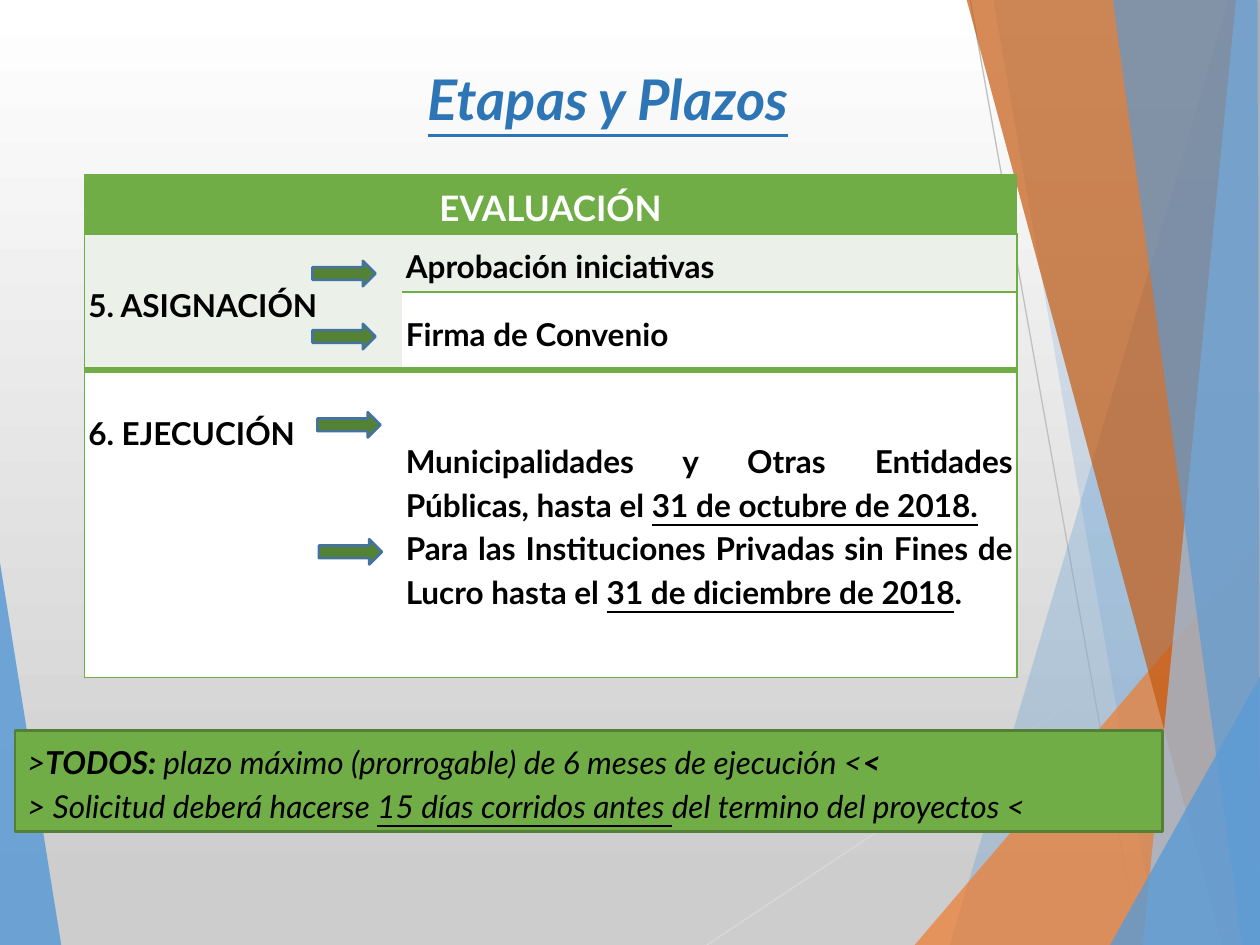
from lxml.etree import SubElement
from pptx import Presentation
from pptx.dml.color import RGBColor
from pptx.enum.dml import MSO_THEME_COLOR
from pptx.enum.shapes import MSO_CONNECTOR, MSO_SHAPE
from pptx.enum.text import MSO_ANCHOR, PP_ALIGN
from pptx.oxml import parse_xml
from pptx.oxml.ns import nsdecls, qn
from pptx.util import Cm, Pt

WHITE = RGBColor(0xFF, 0xFF, 0xFF)
BLACK = RGBColor(0x00, 0x00, 0x00)
GREY = RGBColor(0xCD, 0xCD, 0xCD)
LIGHT_LINE = RGBColor(0xD9, 0xD9, 0xD9)
DARK_LINE = RGBColor(0xBF, 0xBF, 0xBF)
BLUE = RGBColor(0x5B, 0x9B, 0xD5)
PALE_BLUE = RGBColor(0x9D, 0xC3, 0xE6)
TITLE_BLUE = RGBColor(0x2E, 0x75, 0xB6)
ARROW_BLUE = RGBColor(0x43, 0x73, 0x9E)
ORANGE = RGBColor(0xED, 0x7D, 0x31)
BROWN = RGBColor(0xC5, 0x5A, 0x11)
GREEN = RGBColor(0x70, 0xAD, 0x47)
DARK_GREEN = RGBColor(0x54, 0x82, 0x35)
NOTE_LINE = RGBColor(0x53, 0x80, 0x35)
PALE_GREEN = RGBColor(0xEB, 0xF1, 0xE9)

FACETS = [
    (BLUE, 85, [(-0.03, 11.15), (1.24, 19.08), (-0.03, 19.05)]),
    (BLUE, 30, [(24.77, 0), (19.15, 19.05), (25.45, 19.08), (25.43, 0.03)]),
    (BLUE, 20, [(20.02, -0.03), (23.34, 19.05), (25.43, 19.05), (25.43, -0.03)]),
    (ORANGE, 72, [(18.44, 19.05), (25.4, 10.9), (25.43, 19.05)]),
    (BROWN, 70, [(19.48, -0.03), (24.64, 19.05), (25.43, 19.05), (25.43, -0.03)]),
    (PALE_BLUE, 70, [(24.92, -0.03), (23.04, 19.05), (25.43, 19.05), (25.4, -0.03)]),
    (BLUE, 65, [(22.43, -0.03), (25.04, 19.05), (25.4, 19.05), (25.35, -0.03)]),
    (BLUE, 80, [(22.38, 19.05), (25.43, 13.59), (25.43, 19.05)]),
]
RAYS = [
    (LIGHT_LINE, (14.25, 19.05), (25.43, 11.61)),
    (DARK_LINE, (19.56, 0), (22.96, 19.05)),
]


def add_text(p, text, size=18, color=BLACK, bold=False, italic=False,
             underline=False, align=PP_ALIGN.LEFT, spacing=1.15):
    """Append a formatted run to a paragraph."""
    p.alignment, p.line_spacing = align, spacing
    r = p.add_run()
    r.text = text
    font = r.font
    font.name, font.size, font.color.rgb = "Lato", Pt(size), color
    font.bold, font.italic, font.underline = bold, italic, underline


def fill_text(tf, paragraphs, **style):
    """Write paragraphs, each a list of (text, extra format) runs."""
    for i, runs in enumerate(paragraphs):
        p = tf.add_paragraph() if i else tf.paragraphs[0]
        for text, extra in runs:
            add_text(p, text, **{**style, **extra})


def set_background(s):
    """Fill the background with a vertical white to grey gradient."""
    fill = s.background.fill
    fill.gradient()
    fill.gradient_angle = 270
    for stop, color, position in zip(fill.gradient_stops, (WHITE, GREY), (0, 0.94)):
        stop.color.theme_color = MSO_THEME_COLOR.BACKGROUND_1
        stop.color.rgb, stop.position = color, position


def add_facet(s, left, top, color, alpha, points):
    """Draw one translucent polygon."""
    corners = [(left + Cm(x), top + Cm(y)) for x, y in points]
    builder = s.shapes.build_freeform(*corners[0])
    builder.add_line_segments(corners[1:], close=True)
    sp = builder.convert_to_shape()
    sp.shadow.inherit = False
    sp.fill.solid()
    sp.fill.fore_color.rgb = color
    sp.line.fill.background()
    rgb = sp.fill._xPr.find(".//" + qn("a:srgbClr"))
    SubElement(rgb, qn("a:alpha"), val=str(alpha * 1000))


def add_decoration(s, left, top):
    """Draw the facets and thin rays along the slide edges."""
    add_facet(s, left, top, *FACETS[0])
    for color, (x1, y1), (x2, y2) in RAYS:
        ray = s.shapes.add_connector(MSO_CONNECTOR.STRAIGHT, left + Cm(x1), top + Cm(y1),
                                     left + Cm(x2), top + Cm(y2))
        ray.line.color.rgb, ray.line.width = color, Pt(0.75)
        SubElement(ray._element.spPr, qn("a:effectLst"))
    for facet in FACETS[1:]:
        add_facet(s, left, top, *facet)


def add_title(s, left, top, width, height):
    """Move and format the title placeholder."""
    title = s.shapes.title
    title.left, title.top, title.width, title.height = left, top, width, height
    tf = title.text_frame
    tf.vertical_anchor = MSO_ANCHOR.MIDDLE
    add_text(tf.paragraphs[0], "Etapas y Plazos", size=32, color=TITLE_BLUE, bold=True,
             italic=True, underline=True, align=PP_ALIGN.CENTER, spacing=0.9)


def set_borders(cell, widths):
    """Set the left, right, top and bottom borders; zero hides one."""
    tc_pr = cell._tc.get_or_add_tcPr()
    for i, (side, width) in enumerate(zip("LRTB", widths)):
        paint = f'<a:solidFill><a:srgbClr val="{GREEN}"/></a:solidFill>' if width else "<a:noFill/>"
        tc_pr.insert(i, parse_xml(
            f'<a:ln{side} {nsdecls("a")} w="{Pt(width)}">{paint}</a:ln{side}>'))


def add_stages(s, left, top, width, height):
    """Build the table of stages and deadlines with its arrows."""
    table = s.shapes.add_table(4, 2, left, top, width, height).table
    table.first_row = table.horz_banding = False
    for column, size in zip(table.columns, (6.4, 12.4)):
        column.width = Cm(size)
    for row, size in zip(table.rows, (1.19, 1.17, 1.57, 6.2)):
        row.height = Cm(size)

    fills = [(GREEN, GREEN), (PALE_GREEN, PALE_GREEN), (PALE_GREEN, WHITE), (WHITE, WHITE)]
    rules = [(1, 1), (1, 1), (0, 1), (4, 4), (1, 1)]
    for row, colors in enumerate(fills):
        for col, color in enumerate(colors):
            cell = table.cell(row, col)
            set_borders(cell, (1 - col, col, rules[row][col], rules[row + 1][col]))
            cell.fill.solid()
            cell.fill.fore_color.rgb = color
            cell.margin_left = cell.margin_right = Cm(0.08)
            cell.margin_top = cell.margin_bottom = 0
            cell.vertical_anchor = MSO_ANCHOR.MIDDLE
    table.cell(0, 0).merge(table.cell(0, 1))
    table.cell(1, 0).merge(table.cell(2, 0))
    table.cell(3, 0).vertical_anchor = MSO_ANCHOR.TOP
    table.cell(3, 0).margin_top = Cm(0.78)

    marked = {"underline": True}
    justified = {"align": PP_ALIGN.JUSTIFY}
    header = {"size": 20, "color": WHITE, "align": PP_ALIGN.CENTER}
    contents = [
        (0, 0, header, [[("EVALUACIÓN", {})]]),
        (1, 0, {}, [[("5. ASIGNACIÓN", {})]]),
        (1, 1, justified, [[("Aprobación iniciativas", {})]]),
        (2, 1, justified, [[("Firma de Convenio", {})]]),
        (3, 0, {}, [[("6. EJECUCIÓN", {})]]),
        (3, 1, justified, [
            [("Municipalidades y Otras Entidades Públicas, hasta el ", {}),
             ("31 de octubre de 2018.", marked)],
            [("Para las Instituciones Privadas sin Fines de Lucro hasta el ", {}),
             ("31 de diciembre de 2018", marked), (".", {})]]),
    ]
    for row, col, style, paragraphs in contents:
        fill_text(table.cell(row, col).text_frame, paragraphs, bold=True, **style)

    for x, y in ((4.6, 1.73), (4.6, 3), (4.7, 4.78), (4.73, 7.34)):
        add_box(s, MSO_SHAPE.RIGHT_ARROW, left + Cm(x), top + Cm(y), Cm(1.27), Cm(0.51),
                DARK_GREEN, ARROW_BLUE)


def add_box(s, kind, left, top, width, height, color, line):
    """Add a filled and outlined preset shape."""
    sp = s.shapes.add_shape(kind, left, top, width, height)
    sp.shadow.inherit = False
    sp.fill.solid()
    sp.fill.fore_color.rgb = color
    sp.line.color.rgb, sp.line.width = line, Pt(1.5)
    return sp


def add_note(s, left, top, width, height):
    """Add the green note about the execution period."""
    sp = add_box(s, MSO_SHAPE.RECTANGLE, left, top, width, height, GREEN, NOTE_LINE)
    tf = sp.text_frame
    tf.word_wrap, tf.vertical_anchor = True, MSO_ANCHOR.MIDDLE
    strong = {"bold": True}
    fill_text(tf, [
        [(">", {}), ("TODOS: ", strong),
         ("plazo máximo (prorrogable) de 6 meses de ejecución <", {}), ("<", strong)],
        [("> Solicitud deberá hacerse ", {}), ("15 días corridos antes ", {"underline": True}),
         ("del termino del proyectos <", {})],
    ], italic=True, align=PP_ALIGN.JUSTIFY)


def main():
    """Build and save the slide."""
    prs = Presentation()
    prs.slide_width, prs.slide_height = Cm(25.4), Cm(19.05)
    s = prs.slides.add_slide(prs.slide_layouts[5])
    set_background(s)
    add_decoration(s, 0, 0)
    add_title(s, Cm(2.36), Cm(1.32), Cm(19.8), Cm(1.5))
    add_stages(s, Cm(1.7), Cm(3.53), Cm(18.8), Cm(10.13))
    add_note(s, Cm(0.3), Cm(14.73), Cm(23.14), Cm(2.03))
    prs.save("out.pptx")


if __name__ == "__main__":
    main()
